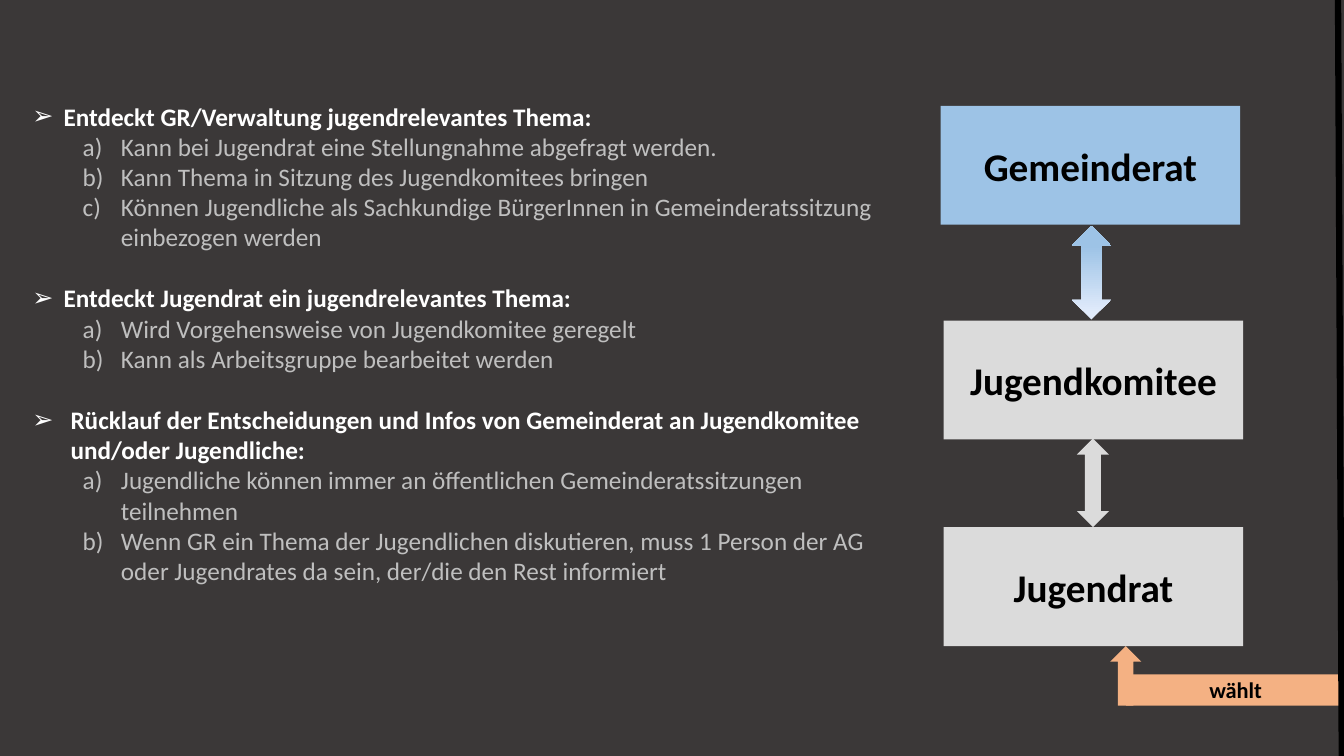
import pptx
import pptx.util
import pptx.dml.color
import pptx.enum.shapes
import pptx.enum.text
import lxml.etree
import pptx.oxml.ns

Inches, Pt = pptx.util.Inches, pptx.util.Pt
RGBColor = pptx.dml.color.RGBColor
SHAPE = pptx.enum.shapes.MSO_SHAPE
ALIGN = pptx.enum.text.PP_ALIGN
ANCHOR = pptx.enum.text.MSO_ANCHOR
qn = pptx.oxml.ns.qn

DARK = RGBColor(0x3B, 0x38, 0x38)
BLACK = RGBColor(0, 0, 0)
WHITE = RGBColor(0xFF, 0xFF, 0xFF)
SILVER = RGBColor(0xBF, 0xBF, 0xBF)
GREY = RGBColor(0xDB, 0xDB, 0xDB)
BLUE = RGBColor(0x9D, 0xC3, 0xE6)
PALE = RGBColor(0xE1, 0xEB, 0xFB)
ORANGE = RGBColor(0xF4, 0xB1, 0x83)

# heading, hanging indent, lettered points
TOPICS = [
    ("Entdeckt GR/Verwaltung jugendrelevantes Thema:", 0.31, [
        "Kann bei Jugendrat eine Stellungnahme abgefragt werden.",
        "Kann Thema in Sitzung des Jugendkomitees bringen",
        "Können Jugendliche als Sachkundige BürgerInnen in "
        "Gemeinderatssitzung einbezogen werden"]),
    ("Entdeckt Jugendrat ein jugendrelevantes Thema:", 0.31, [
        "Wird Vorgehensweise von Jugendkomitee geregelt",
        "Kann als Arbeitsgruppe bearbeitet werden"]),
    ("Rücklauf der Entscheidungen und Infos von Gemeinderat an "
     "Jugendkomitee und/oder Jugendliche:", 0.38, [
         "Jugendliche können immer an öffentlichen Gemeinderatssitzungen "
         "teilnehmen",
         "Wenn GR ein Thema der Jugendlichen diskutieren, muss 1 Person der "
         "AG oder Jugendrates da sein, der/die den Rest informiert"]),
]


def write(para, text, size=18, color=BLACK, bold=True, align=ALIGN.LEFT):
    para.alignment = align
    run = para.add_run()
    run.text = text
    run.font.name = "Calibri"
    run.font.size = Pt(size)
    run.font.bold = bold
    run.font.color.rgb = color


class Board:
    def __init__(self, slide):
        self.slide = slide
        self.shapes = slide.shapes
        slide.background.fill.solid()
        slide.background.fill.fore_color.rgb = DARK

    def block(self, kind, left, top, width, height, fill):
        shape = self.shapes.add_shape(
            kind, Inches(left), Inches(top), Inches(width), Inches(height))
        shape.shadow.inherit = False
        shape.line.fill.background()
        shape.fill.solid()
        shape.fill.fore_color.rgb = fill
        return shape

    def box(self, text, left, top, width, height, fill, size=28):
        shape = self.block(SHAPE.RECTANGLE, left, top, width, height, fill)
        frame = shape.text_frame
        frame.word_wrap = True
        frame.vertical_anchor = ANCHOR.MIDDLE
        write(frame.paragraphs[0], text, size=size, align=ALIGN.CENTER)

    def fade(self, shape, stops, angle):
        shape.fill.gradient()
        shape.fill.gradient_angle = angle
        for stop, (place, color) in zip(shape.fill.gradient_stops, stops):
            stop.position = place
            stop.color.rgb = color

    def line(self, start, end, color, width):
        ends = [Inches(n) for n in start + end]
        line = self.shapes.add_connector(
            pptx.enum.shapes.MSO_CONNECTOR.STRAIGHT, *ends)
        line.line.color.rgb = color
        line.line.width = Pt(width)
        lxml.etree.SubElement(line._element.spPr, qn("a:effectLst"))

    def item(self, para, text, left, hang, bullet, gap=0, **style):
        """Write one list paragraph; bullet is a tag, its attribute and value."""
        para.space_before = Pt(gap)
        para.space_after = Pt(0)
        para.line_spacing = 1.0
        props = para._p.get_or_add_pPr()
        props.set("marL", str(Inches(left)))
        props.set("indent", str(-Inches(hang)))
        tag, key, value = bullet
        lxml.etree.SubElement(props, qn(tag)).set(key, value)
        write(para, text, **style)

    def topics(self, left, top, width, height):
        title = self.shapes.title._element
        title.getparent().remove(title)
        body = self.slide.placeholders[1]
        body.left, body.top = Inches(left), Inches(top)
        body.width, body.height = Inches(width), Inches(height)
        frame = body.text_frame
        frame.word_wrap = True
        frame.auto_size = pptx.enum.text.MSO_AUTO_SIZE.NONE
        frame.vertical_anchor = ANCHOR.TOP
        for i, (head, hang, points) in enumerate(TOPICS):
            para = frame.add_paragraph() if i else frame.paragraphs[0]
            self.item(para, head, hang, hang, ("a:buChar", "char", "➢"),
                      gap=22 if i else 0, color=WHITE)
            for point in points:
                para = frame.add_paragraph()
                para.level = 1
                self.item(para, point, 0.88, 0.38,
                          ("a:buAutoNum", "type", "alphaLcParenR"),
                          color=SILVER, bold=False)


def main():
    deck = pptx.Presentation()
    deck.slide_width, deck.slide_height = Inches(13.33), Inches(7.5)
    board = Board(deck.slides.add_slide(deck.slide_layouts[1]))

    board.box("wählt", 11.17, 6.69, 2.17, 0.31, ORANGE, size=16)
    board.block(SHAPE.UP_ARROW, 11.01, 6.41, 0.31, 0.59, ORANGE)
    for name, left, top, fill in [("Jugendrat", 9.36, 5.23, GREY),
                                  ("Jugendkomitee", 9.36, 3.18, GREY),
                                  ("Gemeinderat", 9.33, 1.05, BLUE)]:
        board.box(name, left, top, 2.97, 1.18, fill)
    board.block(SHAPE.UP_DOWN_ARROW, 10.68, 4.35, 0.32, 0.88, GREY)
    arrow = board.block(SHAPE.UP_DOWN_ARROW, 10.63, 2.24, 0.39, 0.93, BLUE)
    board.fade(arrow, [(0.07, PALE), (0.78, BLUE)], 90)
    board.line((13.27, -0.21), (13.31, 7.9), BLACK, 4.5)
    board.topics(0.22, 0.95, 8.74, 5.25)

    deck.save("out.pptx")


if __name__ == "__main__":
    main()
